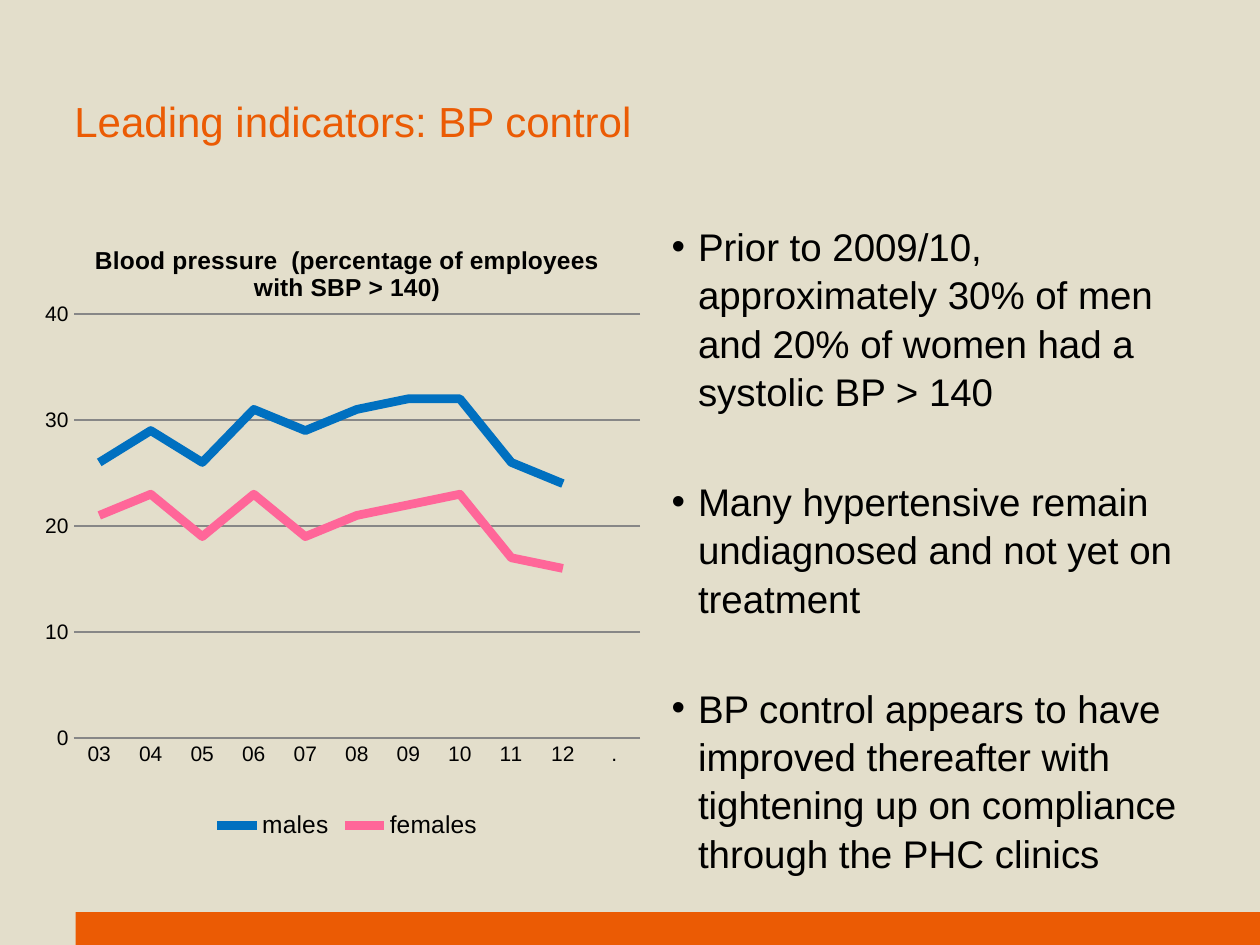
from lxml.etree import SubElement
from pptx import Presentation
from pptx.chart.data import CategoryChartData as ChartData
from pptx.dml.color import RGBColor
from pptx.enum.chart import XL_CHART_TYPE as ChartType
from pptx.enum.chart import XL_LEGEND_POSITION as LegendPosition
from pptx.enum.chart import XL_TICK_MARK as TickMark
from pptx.enum.shapes import MSO_SHAPE as Shape
from pptx.enum.text import MSO_ANCHOR as Anchor
from pptx.enum.text import MSO_AUTO_SIZE as AutoSize
from pptx.enum.text import PP_ALIGN as Align
from pptx.oxml.ns import qn
from pptx.util import Inches, Pt

SAND = RGBColor(0xE3, 0xDE, 0xCB)
ORANGE = RGBColor(0xEB, 0x5B, 0x04)
BLACK = RGBColor(0, 0, 0)
GREY = RGBColor(0x87, 0x87, 0x87)
BLUE = RGBColor(0x00, 0x70, 0xC0)
PINK = RGBColor(0xFF, 0x66, 0x99)
FONT = "Arial"

YEARS = ["03", "04", "05", "06", "07", "08", "09", "10", "11", "12", "."]
SERIES = [
    ("males", BLUE, [26, 29, 26, 31, 29, 31, 32, 32, 26, 24, None]),
    ("females", PINK, [21, 23, 19, 23, 19, 21, 22, 23, 17, 16, None]),
]
POINTS = [
    "Prior to 2009/10, approximately 30% of men and 20% of women had a systolic BP > 140",
    "Many hypertensive remain undiagnosed and not yet on treatment",
    "BP control appears to have improved thereafter with tightening up on "
    "compliance through the PHC clinics",
]


def inches(*lengths):
    """Turn plain numbers into lengths."""
    return [Inches(length) for length in lengths]


def style_font(font, size, color=BLACK, bold=False):
    """Give a font the deck's face with a size, colour and weight."""
    font.name, font.size, font.bold = FONT, Pt(size), bold
    font.color.rgb = color


def place_text(holder, box):
    """Move a placeholder to its box and set its margins."""
    holder.left, holder.top, holder.width, holder.height = inches(*box)
    frame = holder.text_frame
    frame.margin_left, frame.margin_top, frame.margin_right, frame.margin_bottom = inches(0, 0, 0.1, 0.05)
    frame.word_wrap = True
    frame.auto_size = AutoSize.NONE
    frame.vertical_anchor = Anchor.TOP
    return frame


def add_title(page, box, text):
    """Fill the title placeholder."""
    frame = place_text(page.shapes.title, box)
    frame.text = text
    para = frame.paragraphs[0]
    para.alignment = Align.LEFT
    para.line_spacing = 1.05
    style_font(para.runs[0].font, 24, ORANGE)


def add_points(page, box, points):
    """Fill the body placeholder with a spaced bullet list."""
    frame = place_text(page.placeholders[1], box)
    for index, point in enumerate(points):
        para = frame.add_paragraph() if index else frame.paragraphs[0]
        para.text = point
        para.alignment = Align.LEFT
        para.line_spacing = 1.05
        para.space_before = Pt(35 if index else 0)
        props = para._p.get_or_add_pPr()
        props.set("marL", str(Inches(0.21)))
        props.set("indent", str(Inches(-0.21)))
        SubElement(props, qn("a:buFont"), typeface=FONT)
        SubElement(props, qn("a:buChar"), char="•")
        style_font(para.runs[0].font, 22)


def set_plot_area(chart, left, top, width, height):
    """Fix the inner plot area as fractions of the chart."""
    area = chart._chartSpace.chart.plotArea
    for old in area.findall(qn("c:layout")):
        area.remove(old)
    layout = SubElement(area, qn("c:layout"))
    area.insert(0, layout)
    manual = SubElement(layout, qn("c:manualLayout"))
    settings = [("layoutTarget", "inner"), ("xMode", "edge"), ("yMode", "edge"),
                ("x", left), ("y", top), ("w", width), ("h", height)]
    for name, value in settings:
        SubElement(manual, qn(f"c:{name}"), val=str(value))


def style_axes(chart):
    """Set the scale, grid, lines and labels of both axes."""
    for axis in (chart.category_axis, chart.value_axis):
        axis.major_tick_mark = axis.minor_tick_mark = TickMark.NONE
        style_font(axis.tick_labels.font, 12)
    chart.category_axis.format.line.color.rgb = GREY
    values = chart.value_axis
    values.minimum_scale, values.maximum_scale, values.major_unit = 0, 40, 10
    values.format.line.fill.background()
    values.has_major_gridlines = True
    values.major_gridlines.format.line.color.rgb = GREY


def add_pressure_chart(page, box, title):
    """Draw the blood pressure line chart."""
    data = ChartData()
    data.categories = YEARS
    for name, _, values in SERIES:
        data.add_series(name, values)
    chart = page.shapes.add_chart(ChartType.LINE, *inches(*box), data).chart
    style_font(chart.font, 18)
    chart.has_title = True
    chart.chart_title.include_in_layout = False
    chart.chart_title.text_frame.text = title
    style_font(chart.chart_title.text_frame.paragraphs[0].runs[0].font, 14, bold=True)
    chart.has_legend = True
    chart.legend.position = LegendPosition.BOTTOM
    chart.legend.include_in_layout = False
    style_font(chart.legend.font, 14)
    style_axes(chart)
    plot = chart.plots[0]
    plot.vary_by_categories = False
    for series, (_, color, _) in zip(plot.series, SERIES):
        series.smooth = False
        series.format.line.color.rgb = color
        series.format.line.width = Pt(5)
    set_plot_area(chart, 0.08, 0.15, 0.87, 0.68)


def add_footer_bar(page, box):
    """Draw the coloured bar along the bottom."""
    bar = page.shapes.add_shape(Shape.RECTANGLE, *inches(*box))
    bar.shadow.inherit = False
    bar.fill.solid()
    bar.fill.fore_color.rgb = ORANGE
    bar.line.fill.background()


def main():
    """Build and save the deck."""
    deck = Presentation()
    deck.slide_width, deck.slide_height = inches(10, 7.5)
    page = deck.slides.add_slide(deck.slide_layouts[1])
    page.background.fill.solid()
    page.background.fill.fore_color.rgb = SAND
    add_footer_bar(page, (0.6, 7.24, 9.4, 0.26))
    add_title(page, (0.59, 0.74, 8.74, 0.5), "Leading indicators: BP control")
    add_points(page, (5.33, 1.75, 4.42, 4.95), POINTS)
    add_pressure_chart(page, (0.17, 1.75, 5.17, 4.95),
                       "Blood pressure  (percentage of employees with SBP > 140)")
    deck.save("out.pptx")


if __name__ == "__main__":
    main()
